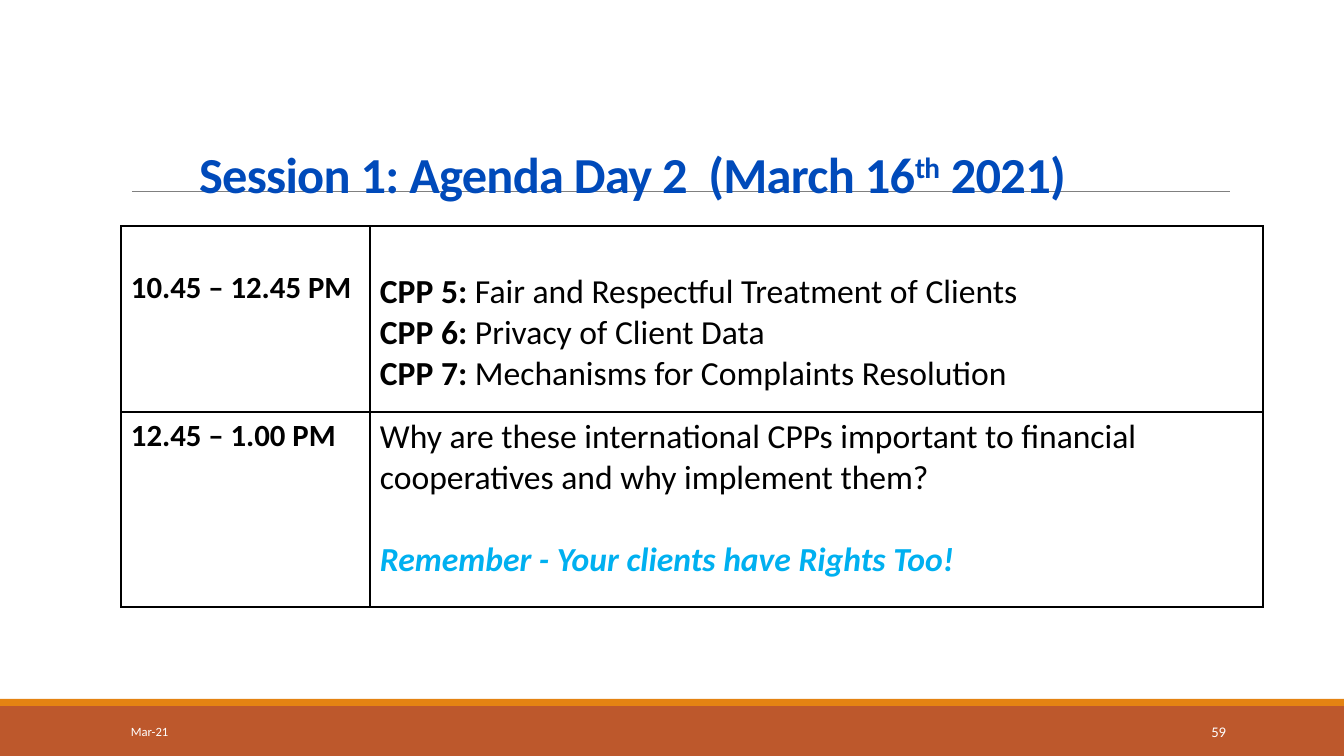
from lxml.etree import SubElement
from pptx import Presentation
from pptx.dml.color import RGBColor
from pptx.enum.shapes import MSO_CONNECTOR, MSO_SHAPE
from pptx.enum.text import MSO_ANCHOR as ANCHOR, PP_ALIGN as ALIGN
from pptx.oxml.ns import qn
from pptx.util import Pt

PX = 914400 / 100.8
BLACK, WHITE, BLUE, CYAN = "000000", "FFFFFF", "004ABA", "00B0F0"

TITLE = [("Session 1: Agenda Day 2  (March 16", 0), ("th", 30000), (" 2021)", 0)]
FOOTERS = [
    ("Mar-21", 9, ALIGN.LEFT, (121, 712, 272, 40)),
    ("59", 10.5, ALIGN.RIGHT, (1092, 712, 144, 40)),
]
BANDS = [("BD582C", (0, 706, 1344, 50)), ("E48312", (0, 699, 1344, 7))]
AGENDA = [
    {
        "height": 186,
        "time": "10.45 – 12.45 PM",
        "tops": (43, 46),
        "topics": [
            ("CPP 5: ", "Fair and Respectful Treatment of Clients"),
            ("CPP 6: ", "Privacy of Client Data"),
            ("CPP 7: ", "Mechanisms for Complaints Resolution"),
        ],
        "reminder": "",
    },
    {
        "height": 195,
        "time": "12.45 – 1.00 PM",
        "tops": (5, 5),
        "topics": [("", "Why are these international CPPs important to financial "
                        "cooperatives and why implement them?")],
        "reminder": "Remember - Your clients have Rights Too!",
    },
]
AGENDA_LEFT, AGENDA_TOP, COLUMNS = 121, 226, (249, 893)


def px(*lengths):
    return [round(length * PX) for length in lengths]


def rgb(value):
    return RGBColor.from_string(value)


def add_run(paragraph, words, size, color, bold=False, italic=False):
    run = paragraph.add_run()
    run.text = words
    font = run.font
    font.name, font.size, font.bold, font.italic = "Calibri", Pt(size), bold, italic
    font.color.rgb = rgb(color)
    return run


def add_textbox(slide, area, align, anchor):
    frame = slide.shapes.add_textbox(*px(*area)).text_frame
    frame.word_wrap = True
    frame.vertical_anchor = anchor
    frame.paragraphs[0].alignment = align
    return frame


def prepare_cell(cell, top):
    cell.fill.background()
    cell.margin_left, cell.margin_right, cell.margin_top, cell.margin_bottom = px(10, 10, top, 5)
    properties = cell._tc.get_or_add_tcPr()
    for index, side in enumerate(("a:lnL", "a:lnR", "a:lnT", "a:lnB")):
        border = properties.makeelement(qn(side), {"w": "12700"})
        properties.insert(index, border)
        SubElement(SubElement(border, qn("a:solidFill")), qn("a:srgbClr"), val=BLACK)
    return cell.text_frame


def add_background(slide):
    for color, area in BANDS:
        band = slide.shapes.add_shape(MSO_SHAPE.RECTANGLE, *px(*area))
        band.shadow.inherit = False
        band.fill.solid()
        band.fill.fore_color.rgb = rgb(color)
        band.line.fill.background()
    rule = slide.shapes.add_connector(MSO_CONNECTOR.STRAIGHT, *px(132, 191, 1230, 191))
    rule.line.color.rgb = rgb("808080")
    rule.line.width = Pt(0.5)
    SubElement(rule._element.spPr, qn("a:effectLst"))


def add_title(slide):
    frame = add_textbox(slide, (29, 143, 1207, 62), ALIGN.CENTER, ANCHOR.TOP)
    frame.margin_top = frame.margin_bottom = 0
    for words, baseline in TITLE:
        run = add_run(frame.paragraphs[0], words, 36, BLUE, bold=True)
        properties = run._r.get_or_add_rPr()
        properties.set("spc", "-50")
        if baseline:
            properties.set("baseline", str(baseline))


def add_agenda(slide):
    heights = [session["height"] for session in AGENDA]
    area = px(AGENDA_LEFT, AGENDA_TOP, sum(COLUMNS), sum(heights))
    agenda = slide.shapes.add_table(len(AGENDA), len(COLUMNS), *area).table
    agenda.first_row = agenda.horz_banding = False
    for column, width in zip(agenda.columns, px(*COLUMNS)):
        column.width = width
    for row, height, session in zip(agenda.rows, px(*heights), AGENDA):
        row.height = height
        time, topics = [prepare_cell(cell, top) for cell, top in zip(row.cells, session["tops"])]
        add_run(time.paragraphs[0], session["time"], 22, BLACK, bold=True)
        for index, (label, topic) in enumerate(session["topics"]):
            paragraph = topics.add_paragraph() if index else topics.paragraphs[0]
            if label:
                add_run(paragraph, label, 24, BLACK, bold=True)
            add_run(paragraph, topic, 24, BLACK)
        if session["reminder"]:
            paragraph = topics.add_paragraph()
            paragraph.space_before = Pt(29.3)
            add_run(paragraph, session["reminder"], 24, CYAN, bold=True, italic=True)


def main():
    deck = Presentation()
    deck.slide_width, deck.slide_height = px(1344, 756)
    slide = deck.slides.add_slide(deck.slide_layouts[6])
    add_background(slide)
    add_title(slide)
    for words, size, align, area in FOOTERS:
        frame = add_textbox(slide, area, align, ANCHOR.MIDDLE)
        add_run(frame.paragraphs[0], words, size, WHITE)
    add_agenda(slide)
    deck.save("out.pptx")


if __name__ == "__main__":
    main()
